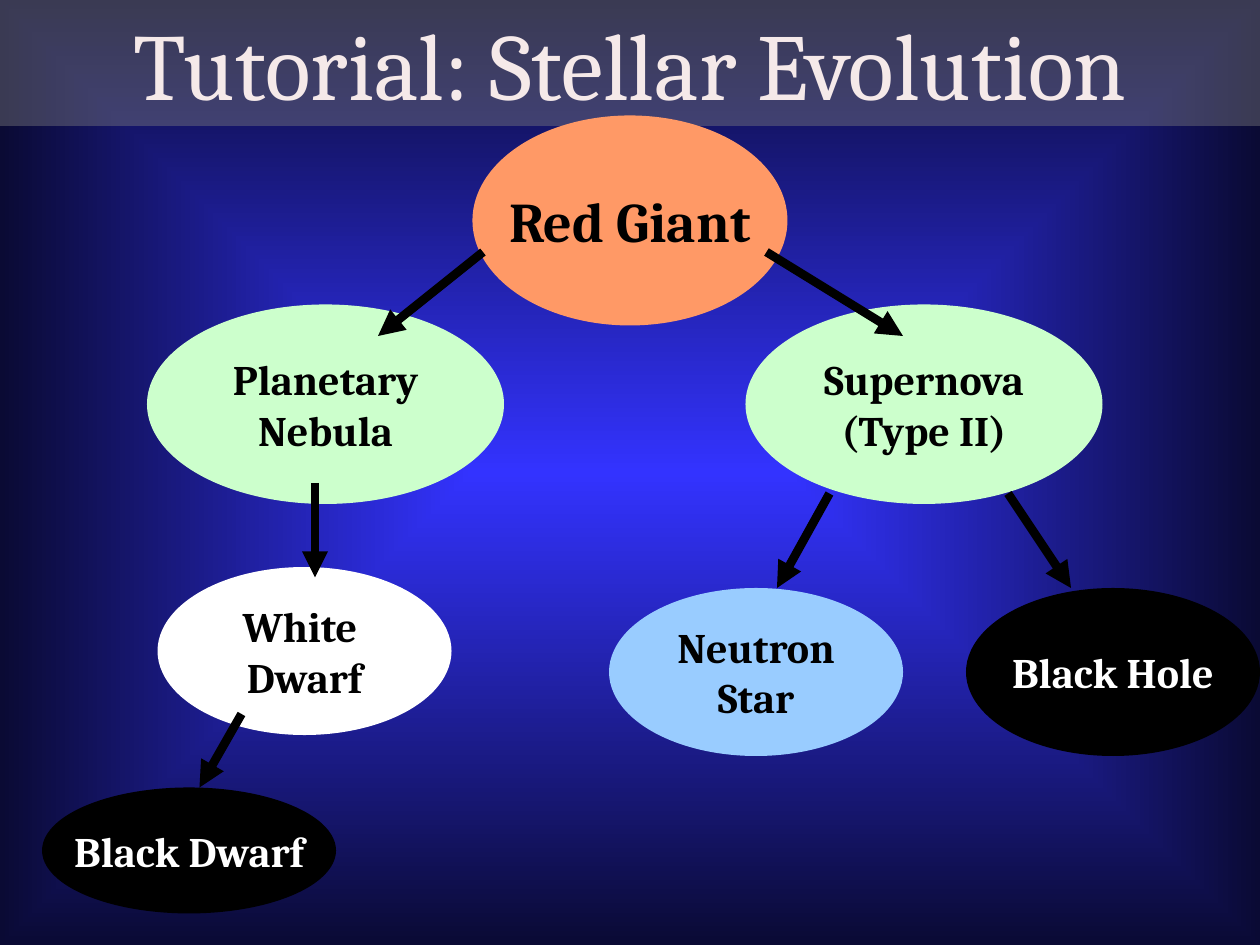
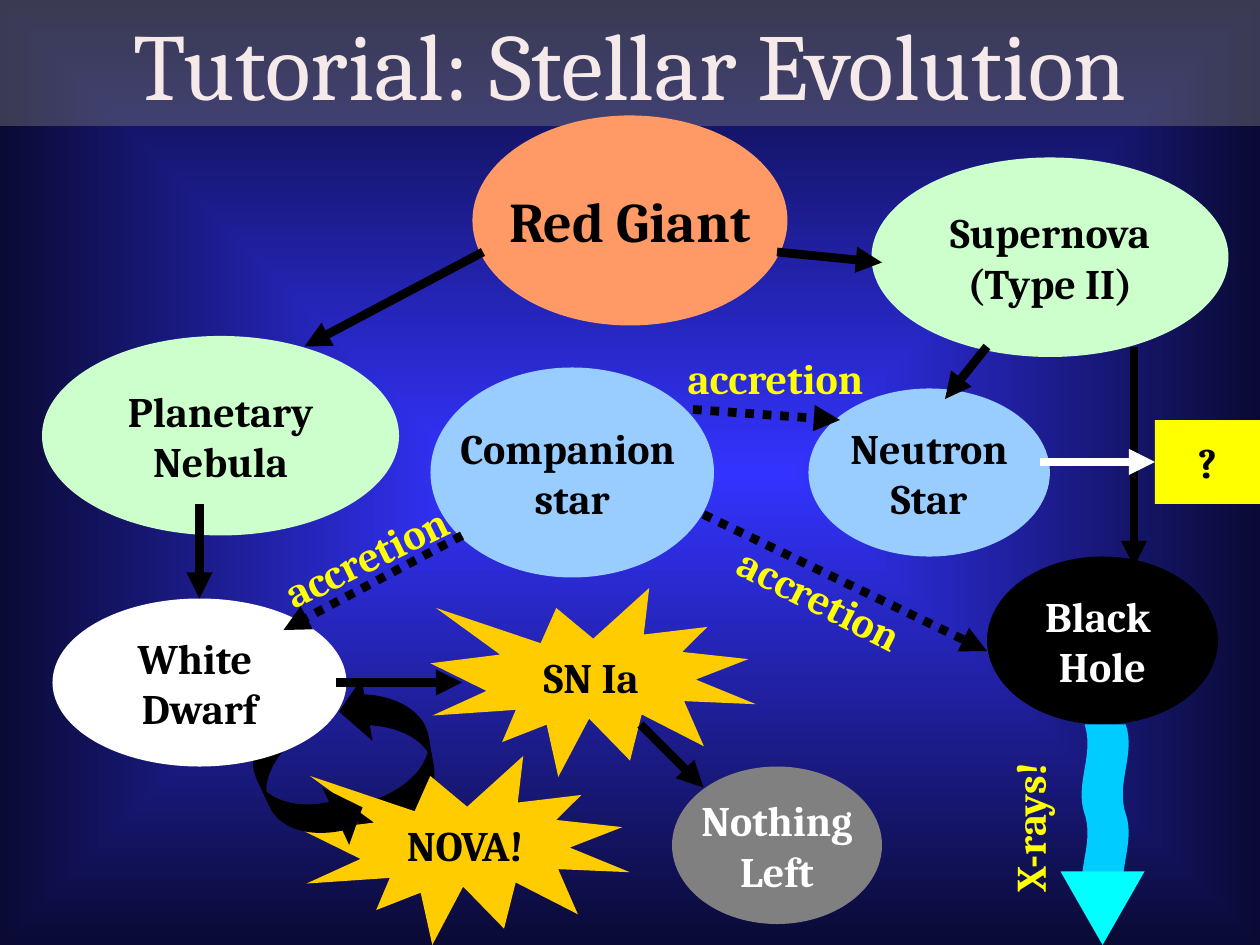
from lxml import etree
from pptx import Presentation
from pptx.dml.color import RGBColor
from pptx.enum import dml, shapes, text
from pptx.oxml import ns
from pptx.util import Inches, Pt

FONT = "Cambria"
TITLE = "Tutorial: Stellar Evolution"
COLS, ROWS, CELLS_PER_INCH = 120, 90, 12
COLORS = {
    "glow": "3333FF", "night": "0A0A34", "band": "808080", "title": "F5E9E9",
    "red": "FF9966", "green": "CCFFCC", "blue": "99CCFF", "gold": "FFCC00",
    "gray": "808080", "yellow": "FFFF00", "beam": "00CCFF", "tip": "00FFFF",
    "black": "000000", "white": "FFFFFF",
}
MSO = shapes.MSO_SHAPE
NODES = {
    "giant": (MSO.OVAL, "red", "black", 32),
    "burst": (MSO.OVAL, "green", "black", 24),
    "star": (MSO.OVAL, "blue", "black", 24),
    "white": (MSO.OVAL, "white", "black", 24),
    "dark": (MSO.OVAL, "black", "white", 24),
    "gone": (MSO.OVAL, "gray", "white", 24),
    "blast": (MSO.EXPLOSION1, "gold", "black", 24),
    "unknown": (MSO.RECTANGLE, "yellow", "black", 24),
}
PLAIN = {
    "loop": (MSO.CURVED_RIGHT_ARROW, "black", (0.375, 0.75, 0.333)),
    "beam": (MSO.DOUBLE_WAVE, "beam", (0.065, 0)),
    "tip": (MSO.ISOSCELES_TRIANGLE, "tip", (0.5,)),
}
ARROWS = {"arrow": ("black", False), "accretion": ("black", True), "query": ("white", False)}

# kind, (left, top, width, height) or (from x, from y, to x, to y), text, turn
RED_GIANT = ("giant", (45, 11, 30, 20), "Red Giant")
SLIDES = [
    [
        ("title",),
        RED_GIANT,
        ("burst", (14, 29, 34, 19), "Planetary\nNebula"),
        ("dark", (4, 75, 28, 12), "Black Dwarf"),
        ("white", (15, 54, 28, 16), "White \nDwarf"),
        ("burst", (71, 29, 34, 19), "Supernova\n(Type II)"),
        ("star", (58, 56, 28, 16), "Neutron\nStar"),
        ("dark", (92, 56, 28, 16), "Black Hole"),
        ("arrow", (46, 24, 36, 32)),
        ("arrow", (30, 46, 30, 55)),
        ("arrow", (23, 68, 19, 75)),
        ("arrow", (73, 24, 86, 32)),
        ("arrow", (79, 47, 74, 56)),
        ("arrow", (96, 47, 102, 56)),
    ],
    [
        ("loop", (33, 64, 8, 15), "", 170),
        ("blast", (29, 72, 31, 18), "NOVA!"),
        ("loop", (25, 67, 8, 15), "", 335),
        ("title",),
        RED_GIANT,
        ("burst", (4, 32, 34, 19), "Planetary\nNebula"),
        ("white", (5, 57, 28, 16), "White \nDwarf"),
        ("arrow", (46, 24, 29, 33)),
        ("arrow", (19, 48, 19, 57)),
        ("burst", (83, 15, 34, 19), "Supernova\n(Type II)"),
        ("arrow", (74, 24, 84, 25)),
        ("star", (77, 37, 23, 16), "Neutron\nStar"),
        ("dark", (94, 53, 22, 16), "Black \nHole"),
        ("arrow", (94, 33, 90, 38)),
        ("arrow", (108, 33, 108, 54)),
        ("star", (41, 35, 27, 20), "Companion \nstar"),
        ("gone", (64, 73, 20, 15), "Nothing\nLeft"),
        ("arrow", (32, 65, 44, 65)),
        ("blast", (41, 56, 31, 18), "SN Ia"),
        ("arrow", (61, 69, 67, 75)),
        ("accretion", (66, 39, 80, 40)),
        ("accretion", (67, 49, 94, 62)),
        ("beam", (96.75, 75.25, 17, 4.5), "", 90),
        ("upright", (95, 70, 7.2, 16.2), "X-rays!", 180),
        ("tip", (101, 83, 8, 7), "", 180),
        ("label", (24, 50, 21.7, 6), "accretion", 334),
        ("label", (63, 33, 21.7, 6), "accretion"),
        ("label", (67.3, 54, 21.7, 6), "accretion", 27),
        ("query", (99, 44, 110, 44)),
        ("unknown", (110, 40, 10, 8), "?"),
        ("accretion", (44, 51, 27, 60)),
    ],
]


def rgb(name):
    return RGBColor.from_string(COLORS[name])


def cells(values):
    return [Inches(v / CELLS_PER_INCH) for v in values]


def add_xml(parent, tag, **attrs):
    return etree.SubElement(parent, ns.qn(tag), attrs)


def paint_background(slide):
    slide.background.fill.gradient()
    grad = slide.element.find(".//" + ns.qn("a:gradFill"))
    for child in list(grad):
        grad.remove(child)
    stops = add_xml(grad, "a:gsLst")
    for pos, name in (("0", "glow"), ("100000", "night")):
        add_xml(add_xml(stops, "a:gs", pos=pos), "a:srgbClr", val=COLORS[name])
    center = dict.fromkeys("ltrb", "50000")
    add_xml(add_xml(grad, "a:path", path="shape"), "a:fillToRect", **center)


def write(sp, words, ink, size, bold=True, wrap=False):
    tf = sp.text_frame
    tf.text = words
    tf.word_wrap = wrap
    for p in tf.paragraphs:
        p.alignment = text.PP_ALIGN.CENTER
        for r in p.runs:
            r.font.name, r.font.size, r.font.bold = FONT, Pt(size), bold
            r.font.color.rgb = rgb(ink)
    return tf


def add_filled(slide, shape, box, fill, turn=0):
    sp = slide.shapes.add_shape(shape, *cells(box))
    sp.shadow.inherit = False
    sp.fill.solid()
    sp.fill.fore_color.rgb = rgb(fill)
    sp.line.fill.background()
    sp.rotation = turn
    return sp


def add_title(slide):
    sp = add_filled(slide, MSO.RECTANGLE, (0, 0, COLS, 12), "band")
    color = sp.fill._xPr.find(".//" + ns.qn("a:srgbClr"))
    add_xml(color, "a:alpha", val="41000")
    tf = write(sp, TITLE, "title", 54, bold=False, wrap=True)
    tf.vertical_anchor = text.MSO_ANCHOR.TOP
    tf.auto_size = text.MSO_AUTO_SIZE.SHAPE_TO_FIT_TEXT


def add_node(slide, kind, box, words):
    shape, fill, ink, size = NODES[kind]
    sp = add_filled(slide, shape, box, fill)
    write(sp, words, ink, size).vertical_anchor = text.MSO_ANCHOR.MIDDLE


def add_plain(slide, kind, box, turn):
    shape, fill, adjustments = PLAIN[kind]
    sp = add_filled(slide, shape, box, fill, turn)
    for i, value in enumerate(adjustments):
        sp.adjustments[i] = value


def add_label(slide, kind, box, words, turn):
    sp = slide.shapes.add_textbox(*cells(box))
    sp.rotation = turn
    upright = kind == "upright"
    tf = write(sp, words, "yellow", 24, wrap=upright)
    tf.auto_size = text.MSO_AUTO_SIZE.SHAPE_TO_FIT_TEXT
    if upright:
        tf._txBody.bodyPr.set("vert", "eaVert")


def add_arrow(slide, kind, ends):
    color, dotted = ARROWS[kind]
    sp = slide.shapes.add_connector(shapes.MSO_CONNECTOR.STRAIGHT, *cells(ends))
    sp.line.width = Pt(5)
    sp.line.color.rgb = rgb(color)
    if dotted:
        sp.line.dash_style = dml.MSO_LINE.ROUND_DOT
    add_xml(sp.line._get_or_add_ln(), "a:tailEnd", type="triangle")
    add_xml(sp._element.spPr, "a:effectLst")


def draw(slide, kind, box=None, words="", turn=0):
    if kind == "title":
        add_title(slide)
    elif kind in NODES:
        add_node(slide, kind, box, words)
    elif kind in PLAIN:
        add_plain(slide, kind, box, turn)
    elif kind in ARROWS:
        add_arrow(slide, kind, box)
    else:
        add_label(slide, kind, box, words, turn)


def main():
    prs = Presentation()
    prs.slide_width, prs.slide_height = cells((COLS, ROWS))
    for parts in SLIDES:
        slide = prs.slides.add_slide(prs.slide_layouts[6])
        paint_background(slide)
        for part in parts:
            draw(slide, *part)
    prs.save("out.pptx")


if __name__ == "__main__":
    main()
